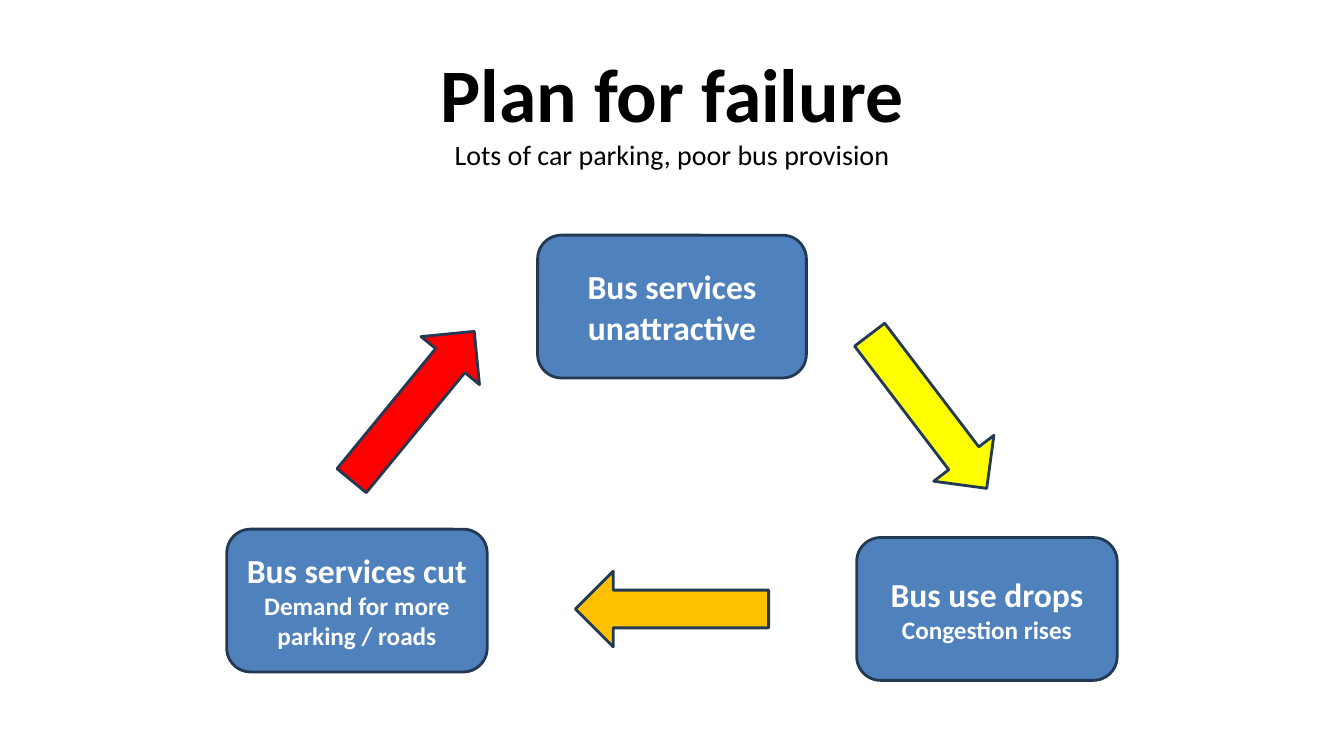
import pptx
import pptx.util
import pptx.dml.color
import pptx.enum.shapes
import pptx.enum.text

Pt = pptx.util.Pt
MSO = pptx.enum.shapes.MSO_SHAPE
COLORS = {"text": "000000", "white": "FFFFFF", "box": "4F81BD", "edge": "233953",
          "yellow": "FFFF00", "orange": "FFC000", "red": "FF0000"}


def rgb(name):
    return pptx.dml.color.RGBColor.from_string(COLORS[name])


def write(tf, lines, color):
    """Fill a text frame with centred (text, size, bold) lines."""
    tf.word_wrap = True
    for i, (text, size, bold) in enumerate(lines):
        p = tf.add_paragraph() if i else tf.paragraphs[0]
        p.text = text
        p.alignment = pptx.enum.text.PP_ALIGN.CENTER
        for r in p.runs:
            r.font.name = "Calibri"
            r.font.size = Pt(size)
            r.font.bold = bold
            r.font.color.rgb = rgb(color)


prs = pptx.Presentation()
prs.slide_width, prs.slide_height = Pt(960), Pt(540)
s = prs.slides.add_slide(prs.slide_layouts[6])

# Title and subtitle
tb = s.shapes.add_textbox(Pt(6), Pt(30), Pt(948), Pt(97))
write(tb.text_frame, [("Plan for failure", 54, True),
                      ("Lots of car parking, poor bus provision", 20, False)], "text")

# Stages of the cycle: left, top, width, lines
stages = [
    (384, 168, 192, [("Bus services unattractive", 24, True)]),
    (612, 384, 186, [("Bus use drops", 24, True), ("Congestion rises", 18, True)]),
    (162, 378, 186, [("Bus services cut", 24, True),
                     ("Demand for more parking / roads", 18, True)]),
]
shapes = []
for left, top, width, lines in stages:
    sp = s.shapes.add_shape(MSO.ROUNDED_RECTANGLE, Pt(left), Pt(top), Pt(width), Pt(102))
    write(sp.text_frame, lines, "white")
    sp.text_frame.vertical_anchor = pptx.enum.text.MSO_ANCHOR.MIDDLE
    shapes.append((sp, "box"))

# Arrows between stages: left, top, rotation, colour
arrows = [(594, 267, 52.7, "yellow"), (411, 408, 180, "orange"), (226, 263, 309.4, "red")]
for left, top, angle, color in arrows:
    sp = s.shapes.add_shape(MSO.RIGHT_ARROW, Pt(left), Pt(top), Pt(138), Pt(54))
    sp.rotation = angle
    shapes.append((sp, color))

# Shared fill and outline
for sp, color in shapes:
    sp.shadow.inherit = False
    sp.fill.solid()
    sp.fill.fore_color.rgb = rgb(color)
    sp.line.color.rgb = rgb("edge")
    sp.line.width = Pt(2)

prs.save("out.pptx")
